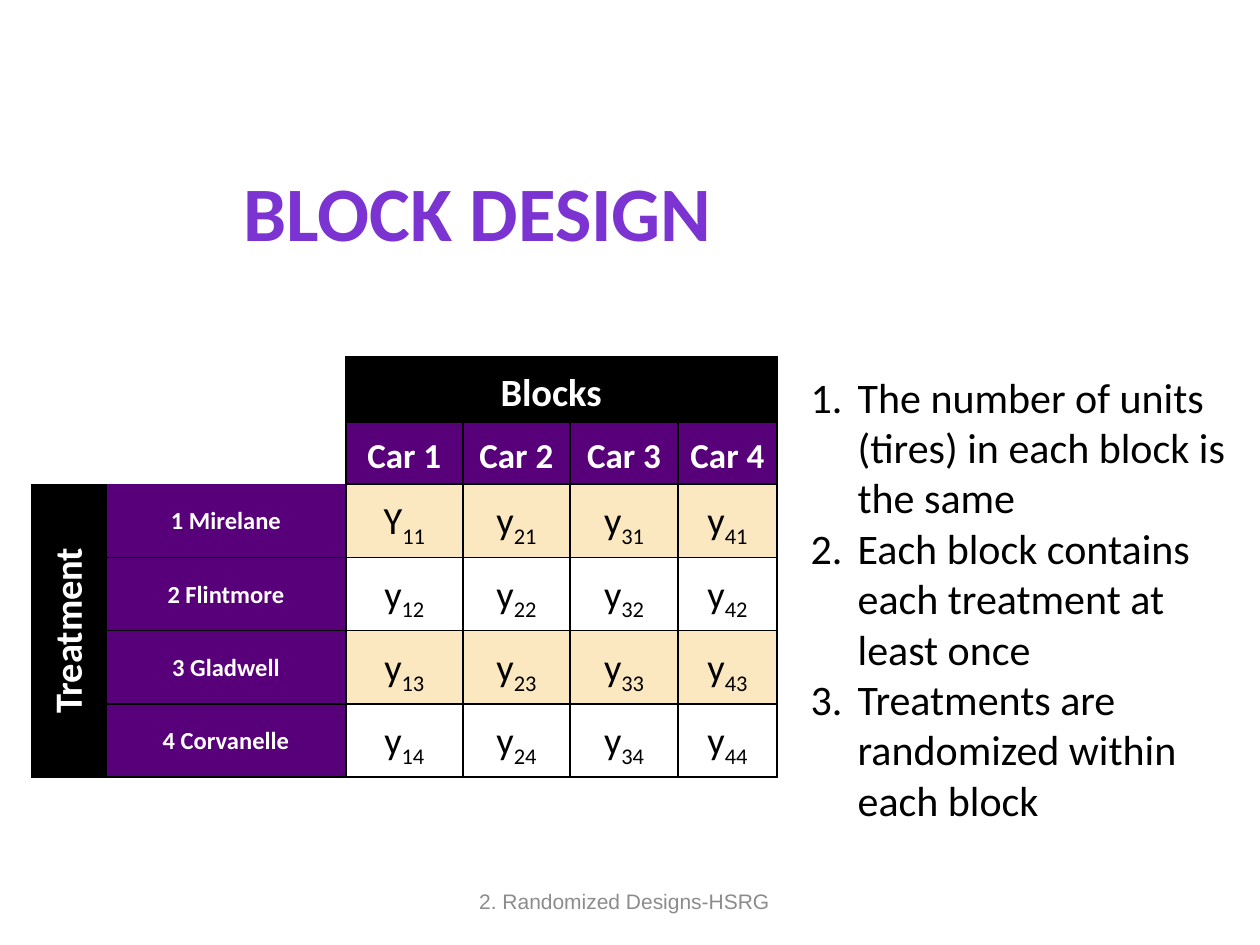
from lxml.etree import SubElement
from pptx import Presentation
from pptx.dml.color import RGBColor
from pptx.enum.text import MSO_ANCHOR, PP_ALIGN
from pptx.oxml import parse_xml
from pptx.oxml.ns import nsdecls, qn
from pptx.util import Cm, Pt

BLACK = RGBColor(0x00, 0x00, 0x00)
WHITE = RGBColor(0xFF, 0xFF, 0xFF)
GRAY = RGBColor(0x8C, 0x8C, 0x8C)
PURPLE = RGBColor(0x57, 0x00, 0x7A)
CREAM = RGBColor(0xFC, 0xE8, 0xC0)
TITLE_EDGE = RGBColor(0x5E, 0x45, 0x7C)
TITLE_DARK = RGBColor(0x3D, 0x1B, 0x67)
TITLE_BRIGHT = RGBColor(0x7B, 0x34, 0xD2)
TITLE_MIDDLE = RGBColor(0x73, 0x30, 0xC4)
TITLE_STOPS = [(0, TITLE_DARK), (43, TITLE_BRIGHT), (48, TITLE_MIDDLE), (100, TITLE_DARK)]

NO_STYLE = "{2D5ABB26-0587-4C30-8999-92F81FD0307C}"
COLUMN_WIDTHS = [1.5, 4.83, 2.36, 2.16, 2.18, 1.99]
ROW_HEIGHT = 1.07
TREATMENTS = ["1 Mirelane", "2 Flintmore", "3 Gladwell", "4 Corvanelle"]
CAR_COUNT = 4
RULES = [
    "The number of units (tires) in each block is the same",
    "Each block contains each treatment at least once",
    "Treatments are randomized within each block",
]

HEADING = {"size": Pt(22), "bold": True, "color": WHITE}
CAR = {"size": Pt(20), "bold": True, "color": WHITE}
TREATMENT = {"size": Pt(14), "bold": True, "color": WHITE}
VALUE = {"size": Pt(22), "bold": False, "color": BLACK}
WIDE_CELL = {"margin_left": Cm(0.22), "margin_right": Cm(0.22),
             "margin_top": Cm(0.13), "margin_bottom": Cm(0.13)}
TIGHT_CELL = {"margin_left": Cm(0.03), "margin_right": Cm(0.03), "margin_top": Cm(0.03),
              "margin_bottom": Cm(0), "vertical_anchor": MSO_ANCHOR.MIDDLE}


def set_attributes(target, values):
    """Set each named value on the target."""
    for name, value in values.items():
        setattr(target, name, value)


def add_run(paragraph, text, size, color=None, bold=False, name="Calibri"):
    """Append a formatted run and return it."""
    run = paragraph.add_run()
    run.text = text
    set_attributes(run.font, {"size": size, "bold": bold, "name": name})
    if color is not None:
        run.font.color.rgb = color
    return run


def add_text_frame(slide, box, anchor):
    """Add a wrapping text box and return its text frame."""
    text_frame = slide.shapes.add_textbox(*map(Cm, box)).text_frame
    set_attributes(text_frame, {"word_wrap": True, "vertical_anchor": anchor})
    return text_frame


def add_title(slide, box):
    """Place the title with its gradient letters and thin outline."""
    text_frame = add_text_frame(slide, box, MSO_ANCHOR.MIDDLE)
    run = add_run(text_frame.paragraphs[0], "BLOCK DESIGN", Pt(44), bold=True)
    stops = "".join(f'<a:gs pos="{position * 1000}"><a:srgbClr val="{color}"/></a:gs>'
                    for position, color in TITLE_STOPS)
    outline = (f'<a:ln {nsdecls("a")} w="9000"><a:solidFill>'
               f'<a:srgbClr val="{TITLE_EDGE}"/></a:solidFill></a:ln>')
    gradient = (f'<a:gradFill {nsdecls("a")}><a:gsLst>{stops}</a:gsLst>'
                '<a:lin ang="5400000" scaled="0"/></a:gradFill>')
    for position, xml in enumerate((outline, gradient)):
        run._r.get_or_add_rPr().insert(position, parse_xml(xml))


def add_footer(slide, box):
    """Place the footer line."""
    text_frame = add_text_frame(slide, box, MSO_ANCHOR.MIDDLE)
    text_frame.margin_right = Cm(0.5)
    paragraph = text_frame.paragraphs[0]
    paragraph.alignment = PP_ALIGN.CENTER
    add_run(paragraph, "2. Randomized Designs-HSRG", Pt(12), GRAY, name="Arial")


def add_rules(slide, box):
    """Place the numbered rules of the design."""
    text_frame = add_text_frame(slide, box, MSO_ANCHOR.BOTTOM)
    for index, rule in enumerate(RULES):
        paragraph = text_frame.paragraphs[0] if index == 0 else text_frame.add_paragraph()
        add_run(paragraph, rule, Pt(24), BLACK)
        properties = paragraph._p.get_or_add_pPr()
        properties.set("marL", str(Cm(0.95)))
        properties.set("indent", str(-Cm(0.95)))
        SubElement(properties, qn("a:buFont"), typeface="+mj-lt")
        SubElement(properties, qn("a:buAutoNum"), type="arabicPeriod")


def add_borders(cell, sides):
    """Draw thin black borders on the given sides of a cell."""
    for side in sides:
        line = SubElement(cell._tc.get_or_add_tcPr(), qn(f"a:ln{side}"), w=str(Pt(1)))
        fill = SubElement(line, qn("a:solidFill"))
        SubElement(fill, qn("a:srgbClr"), val=str(BLACK))


def fill_cell(cell, text, style, color=None, layout=WIDE_CELL, subscript=""):
    """Write centred text and an optional subscript into a cell."""
    set_attributes(cell, layout)
    paragraph = cell.text_frame.paragraphs[0]
    paragraph.alignment = PP_ALIGN.CENTER
    if layout is not TIGHT_CELL:
        paragraph.line_spacing = 1.15
    add_run(paragraph, text, **style)
    if subscript:
        run = add_run(paragraph, subscript, **style)
        run._r.get_or_add_rPr().set("baseline", "-25000")
    if color is None:
        cell.fill.background()
    else:
        cell.fill.solid()
        cell.fill.fore_color.rgb = color


def add_design_table(slide, box):
    """Place the table of treatments against blocks."""
    row_count = len(TREATMENTS) + 2
    frame = slide.shapes.add_table(row_count, len(COLUMN_WIDTHS), *map(Cm, box))
    table = frame.table
    set_attributes(table, {"first_row": False, "horz_banding": False})
    table._tbl.tblPr.find(qn("a:tableStyleId")).text = NO_STYLE
    for column, width in zip(table.columns, COLUMN_WIDTHS):
        column.width = Cm(width)
    for row_index, row in enumerate(table.rows):
        row.height = Cm(ROW_HEIGHT)
        for column_index in range(len(COLUMN_WIDTHS)):
            if row_index > 1 or column_index > 1:
                sides = "LRB" if column_index < 2 and row_index == 2 else "LRTB"
                add_borders(table.cell(row_index, column_index), sides)
    frame.height = Cm(box[3])

    blocks = table.cell(0, 2)
    blocks.merge(table.cell(0, 5))
    fill_cell(blocks, "Blocks", HEADING, BLACK, {**WIDE_CELL, "margin_right": Cm(0.63)})
    side_heading = table.cell(2, 0)
    side_heading.merge(table.cell(5, 0))
    fill_cell(side_heading, "Treatment", HEADING, BLACK)
    side_heading._tc.get_or_add_tcPr().set("vert", "vert270")

    for car in range(1, CAR_COUNT + 1):
        fill_cell(table.cell(1, car + 1), f"Car {car}", CAR, PURPLE)
    for number, treatment in enumerate(TREATMENTS, start=1):
        fill_cell(table.cell(number + 1, 1), treatment, TREATMENT, PURPLE, TIGHT_CELL)
        for car in range(1, CAR_COUNT + 1):
            letter = "Y" if number == car == 1 else "y"
            fill_cell(table.cell(number + 1, car + 1), letter, VALUE,
                      CREAM if number % 2 else None, subscript=f"{car}{number}")


def main():
    """Build the slide and save it."""
    presentation = Presentation()
    set_attributes(presentation, {"slide_width": Cm(25.4), "slide_height": Cm(19.05)})
    slide = presentation.slides.add_slide(presentation.slide_layouts[6])
    add_title(slide, (4.65, 2.97, 17.35, 2.54))
    add_footer(slide, (8.69, 17.65, 8.05, 1.02))
    add_design_table(slide, (0.64, 7.19, sum(COLUMN_WIDTHS), 7.9))
    add_rules(slide, (16.09, 6.23, 9.31, 10.52))
    presentation.save("out.pptx")


if __name__ == "__main__":
    main()
